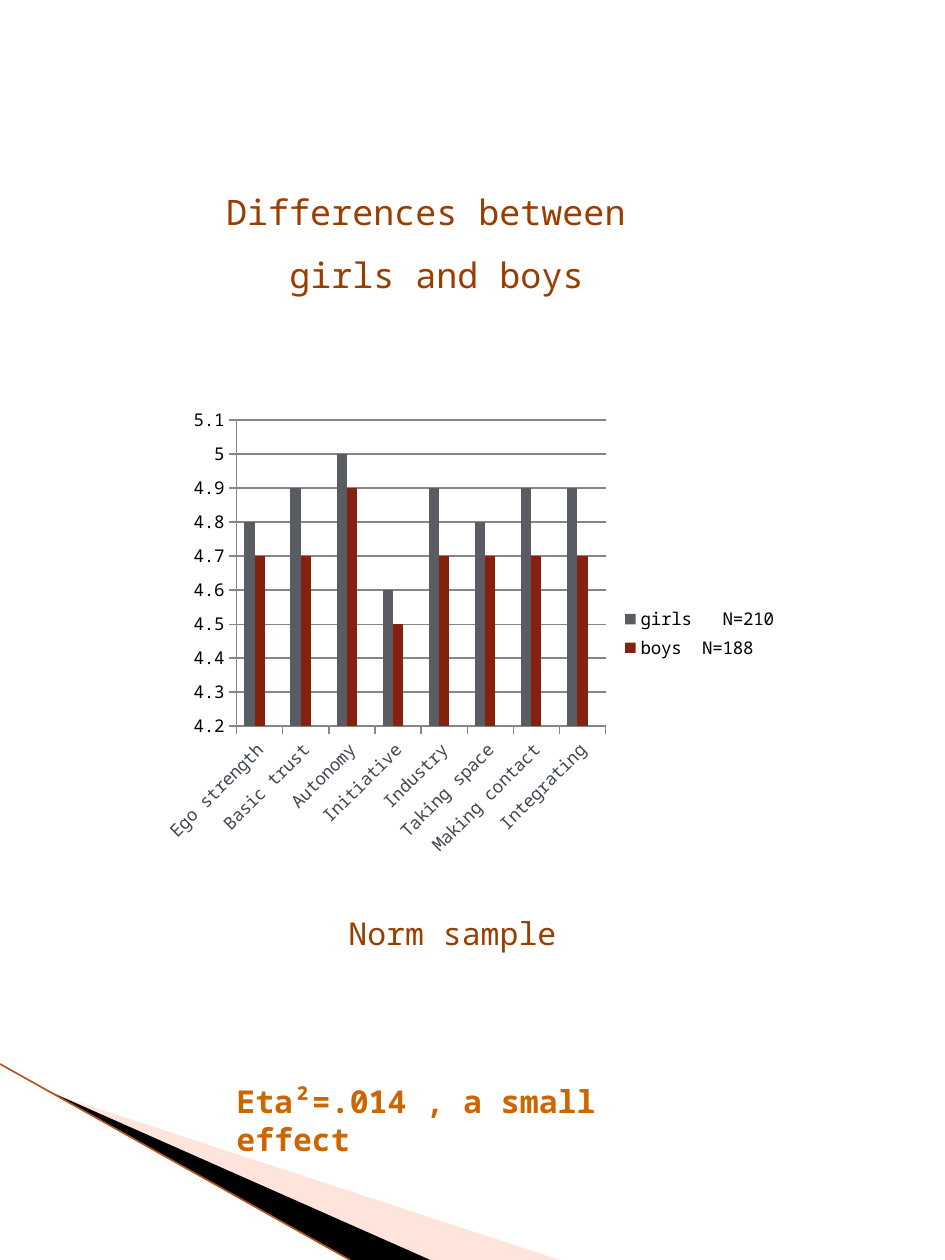
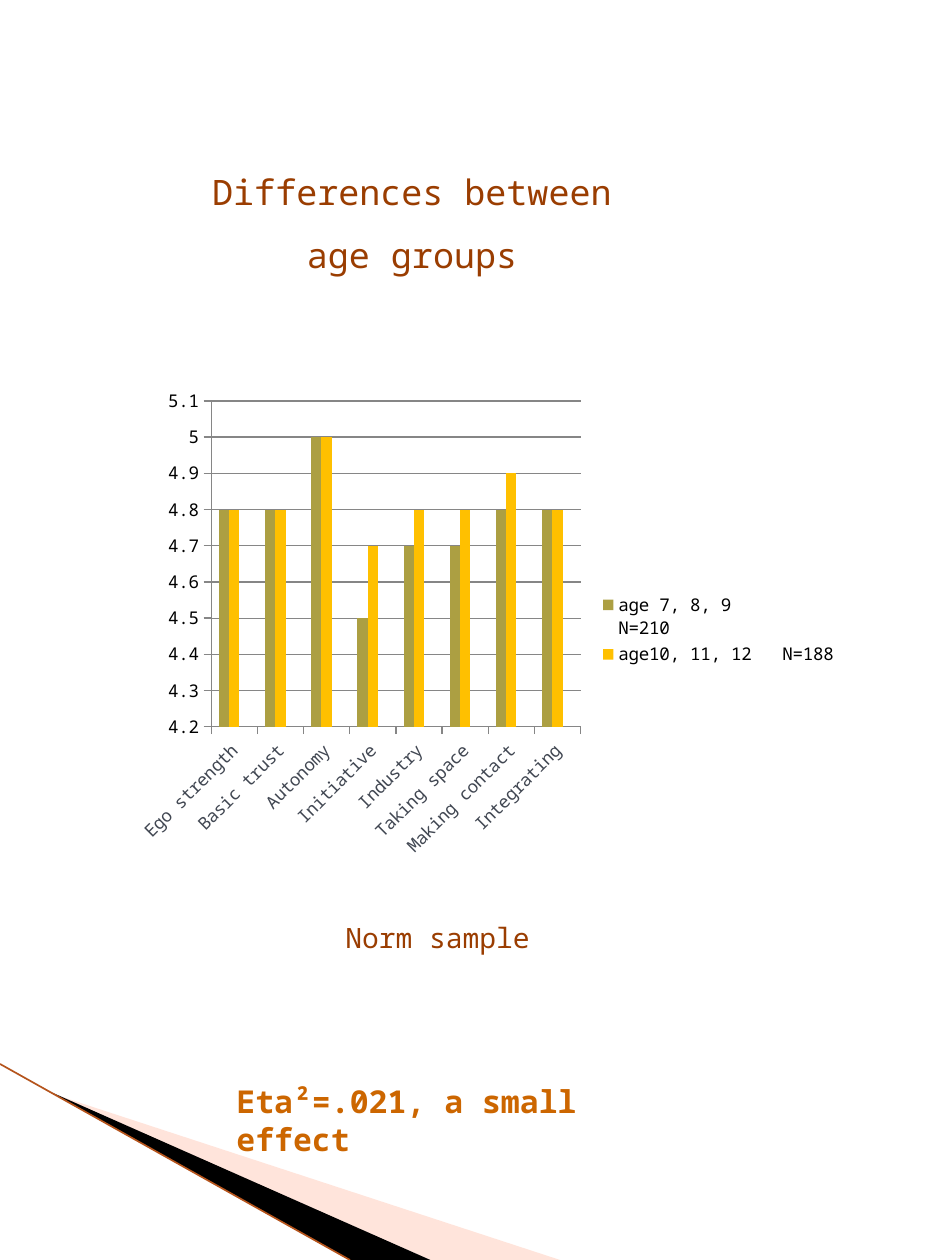
from lxml import etree
from pptx import Presentation
from pptx import util as u
from pptx.chart import data as chart_data
from pptx.dml import color
from pptx.enum import chart as chart_enum
from pptx.enum import shapes, text
from pptx.oxml import ns

FONT = "Noto Sans Mono"
COLORS = {
    "title": "9A3D01",
    "effect": "CC6600",
    "pale": "FFBCA5",
    "black": "000000",
    "edge": "B5541C",
    "label": "414752",
    "grid": "868686",
    "girls": "595D63",
    "boys": "862110",
    "younger": "AC9F42",
    "older": "FFC000",
    "spare": "B32C16",
}
CATEGORIES = ["Ego strength", "Basic trust", "Autonomy", "Initiative",
              "Industry", "Taking space", "Making contact", "Integrating"]
SPARE_SERIES = ("Series 3", [None] * len(CATEGORIES), "spare")


def rgb(name):
    return color.RGBColor.from_string(COLORS[name])


def write_text(frame, content, size=18, tint="title", bold=False,
               align=text.PP_ALIGN.CENTER, spacing=1.0):
    frame.word_wrap = True
    frame.vertical_anchor = text.MSO_ANCHOR.TOP
    for index, line in enumerate(content.split("\n")):
        paragraph = frame.paragraphs[0] if index == 0 else frame.add_paragraph()
        paragraph.alignment = align
        paragraph.line_spacing = spacing
        paragraph.space_before = u.Pt(0)
        run = paragraph.add_run()
        run.text = line
        run.font.name = FONT
        run.font.size = u.Pt(size)
        run.font.bold = bold
        run.font.color.rgb = rgb(tint)


def make_layout(inner, **fractions):
    layout = etree.Element(ns.qn("c:layout"))
    manual = etree.SubElement(layout, ns.qn("c:manualLayout"))
    settings = {"xMode": "edge", "yMode": "edge", **fractions}
    if inner:
        settings = {"layoutTarget": "inner", **settings}
    for tag, value in settings.items():
        etree.SubElement(manual, ns.qn(f"c:{tag}"), val=str(value))
    return layout


class Deck:
    def __init__(self):
        self.presentation = Presentation()
        self.presentation.slide_width = u.Pt(540)
        self.presentation.slide_height = u.Pt(720)
        self.slide = None

    def new_slide(self):
        layout = self.presentation.slide_layouts[5]
        self.slide = self.presentation.slides.add_slide(layout)
        self.wedge([(30, 625), (320, 720), (246, 720)], "pale", alpha=40)
        self.wedge([(29, 624), (246, 720), (200, 720)], "black")
        self.edge_line((0, 608), (200, 720))

    def wedge(self, points, tint, alpha=None):
        corners = [(u.Pt(x), u.Pt(y)) for x, y in points]
        builder = self.slide.shapes.build_freeform(*corners[0])
        builder.add_line_segments(corners[1:], close=True)
        shape = builder.convert_to_shape()
        shape.shadow.inherit = False
        shape.fill.solid()
        shape.fill.fore_color.rgb = rgb(tint)
        shape.line.fill.background()
        if alpha is not None:
            fill_color = shape._element.spPr.find(".//" + ns.qn("a:srgbClr"))
            etree.SubElement(fill_color, ns.qn("a:alpha"), val=str(alpha * 1000))

    def edge_line(self, start, end):
        line = self.slide.shapes.add_connector(
            shapes.MSO_CONNECTOR.STRAIGHT, *map(u.Pt, start + end))
        line.line.color.rgb = rgb("edge")
        line.line.width = u.Pt(0.95)
        etree.SubElement(line._element.spPr, ns.qn("a:effectLst"))

    def title(self, content, box):
        title = self.slide.shapes.title
        title.left, title.top, title.width, title.height = map(u.Pt, box)
        title.text_frame.auto_size = text.MSO_AUTO_SIZE.NONE
        write_text(title.text_frame, content, size=20, spacing=1.5)

    def text_box(self, content, box, **style):
        shape = self.slide.shapes.add_textbox(*map(u.Pt, box))
        write_text(shape.text_frame, content, **style)

    def column_chart(self, box, series, plot_area, legend_area=None):
        series = series + [SPARE_SERIES]
        data = chart_data.CategoryChartData()
        data.categories = CATEGORIES
        for name, values, tint in series:
            data.add_series(name, values)
        chart = self.slide.shapes.add_chart(
            chart_enum.XL_CHART_TYPE.COLUMN_CLUSTERED, *map(u.Pt, box), data).chart
        chart.has_title = False
        chart.font.name = FONT
        chart.font.size = u.Pt(10)
        chart.font.color.rgb = rgb("black")
        plot = chart.plots[0]
        plot.gap_width = 150
        plot.overlap = 0
        plot.vary_by_categories = False
        for column, (name, values, tint) in zip(plot.series, series):
            column.format.fill.solid()
            column.format.fill.fore_color.rgb = rgb(tint)
            column.invert_if_negative = False
        self.chart_axes(chart)
        self.chart_layout(chart, len(series) - 1, plot_area, legend_area)

    def chart_axes(self, chart):
        value_axis, category_axis = chart.value_axis, chart.category_axis
        value_axis.minimum_scale = 4.2
        value_axis.maximum_scale = 5.1
        value_axis.major_unit = 0.1
        value_axis.has_major_gridlines = True
        category_axis.has_major_gridlines = False
        for axis in (value_axis, category_axis):
            axis.major_tick_mark = chart_enum.XL_TICK_MARK.OUTSIDE
            axis.minor_tick_mark = chart_enum.XL_TICK_MARK.NONE
        for lines in (value_axis, category_axis, value_axis.major_gridlines):
            lines.format.line.color.rgb = rgb("grid")
            lines.format.line.width = u.Pt(0.75)
        labels = category_axis.tick_labels.font
        labels.name = FONT
        labels.size = u.Pt(10)
        labels.color.rgb = rgb("label")
        body = chart._chartSpace.xpath(".//c:catAx/c:txPr/a:bodyPr")[0]
        body.set("rot", "-2700000")
        body.set("vert", "horz")

    def chart_layout(self, chart, hidden_index, plot_area, legend_area):
        chart.has_legend = True
        chart.legend.position = chart_enum.XL_LEGEND_POSITION.RIGHT
        chart.legend.include_in_layout = False
        for layout in chart._chartSpace.xpath(
                "c:chart/c:plotArea/c:layout | c:chart/c:legend/c:layout"):
            layout.getparent().remove(layout)
        area = chart._chartSpace.xpath("c:chart/c:plotArea")[0]
        area.insert(0, make_layout(True, **plot_area))
        position = chart._chartSpace.xpath("c:chart/c:legend/c:legendPos")[0]
        if legend_area:
            position.addnext(make_layout(False, **legend_area))
        entry = etree.Element(ns.qn("c:legendEntry"))
        etree.SubElement(entry, ns.qn("c:idx"), val=str(hidden_index))
        etree.SubElement(entry, ns.qn("c:delete"), val="1")
        position.addnext(entry)

    def effect_note(self, content):
        self.text_box(content, (128, 615, 261, 48), tint="effect", bold=True,
                      align=text.PP_ALIGN.LEFT)


def gender_slide(deck):
    deck.new_slide()
    deck.title("Differences between \ngirls and boys", (77, 93.5, 345, 80))
    deck.text_box("Norm sample", (173.5, 518.5, 170, 51))
    deck.column_chart(
        (88, 229.5, 363.5, 265),
        [("girls   N=210", [4.8, 4.9, 5, 4.6, 4.9, 4.8, 4.9, 4.9], "girls"),
         ("boys  N=188", [4.7, 4.7, 4.9, 4.5, 4.7, 4.7, 4.7, 4.7], "boys")],
        plot_area={"x": 0.13, "y": 0.04, "w": 0.58, "h": 0.66})
    deck.effect_note("Eta²=.014 , a small effect")


def age_slide(deck):
    deck.new_slide()
    deck.title("Differences between\nage groups", (71, 82, 329, 80))
    deck.text_box("Norm sample", (179, 522.5, 142, 27), size=16)
    deck.column_chart(
        (71, 218, 414, 278),
        [("age 7, 8, 9         N=210", [4.8, 4.8, 5, 4.5, 4.7, 4.7, 4.8, 4.8], "younger"),
         ("age10, 11, 12   N=188", [4.8, 4.8, 5, 4.7, 4.8, 4.8, 4.9, 4.8], "older")],
        plot_area={"x": 0.12, "y": 0.04, "w": 0.51, "h": 0.67},
        legend_area={"x": 0.65, "y": 0.43, "w": 0.34, "h": 0.16})
    deck.effect_note("Eta²=.021, a small effect")


def main():
    deck = Deck()
    gender_slide(deck)
    age_slide(deck)
    deck.presentation.save("out.pptx")


if __name__ == "__main__":
    main()
